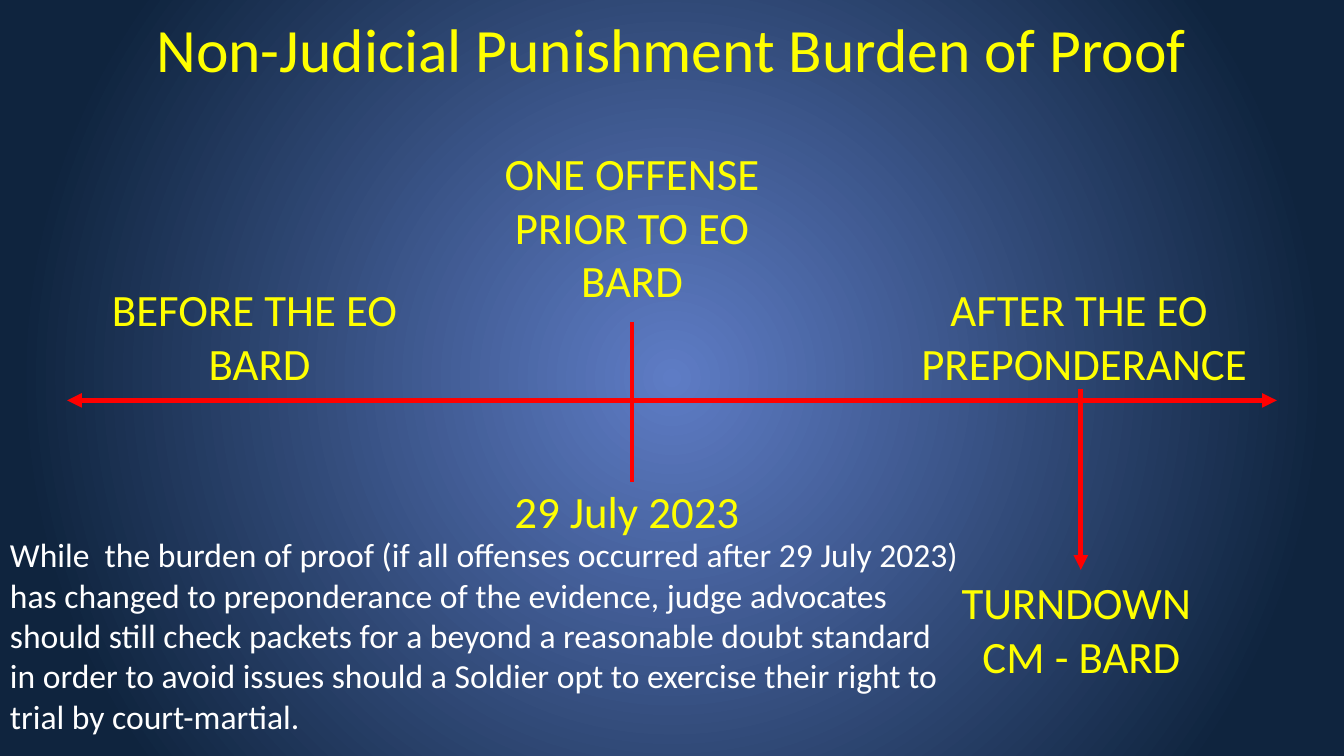
from lxml.etree import SubElement
from pptx import Presentation
from pptx.dml.color import RGBColor
from pptx.enum.shapes import MSO_CONNECTOR as Connector
from pptx.enum.text import MSO_ANCHOR as Anchor, PP_ALIGN as Align
from pptx.oxml.ns import qn
from pptx.util import Pt

COLORS = {"glow": "5E7CC5", "edge": "0F243E", "label": "FFFF00",
          "line": "FF0000", "note": "FFFFFF"}
FONT = "Calibri"
SLIDE_W, SLIDE_H = 960, 540

TITLE = "Non-Judicial Punishment Burden of Proof"
LABEL_W = 275
# left, top, height, lines
LABELS = [
    (314, 342, 46, ["29 July 2023 "]),
    (48, 197.5, 85, ["BEFORE THE EO ", "BARD"]),
    (637, 197.5, 85, ["AFTER THE EO ", "PREPONDERANCE"]),
    (314, 100.5, 124, ["ONE OFFENSE PRIOR TO EO", "BARD"]),
    (635, 407, 85, ["TURNDOWN ", "CM - BARD"]),
]
NOTE = [
    "While  the burden of proof (if all offenses occurred after 29 July 2023)",
    "has changed to preponderance of the evidence, judge advocates",
    "should still check packets for a beyond a reasonable doubt standard",
    "in order to avoid issues should a Soldier opt to exercise their right to",
    "trial by court-martial.",
]
# start, end, ends that carry an arrowhead
TIMELINE = ((48, 286), (912, 286), ["headEnd", "tailEnd"])
DATE_MARK = ((451.5, 230), (451.5, 344), [])
TURNDOWN_ARROW = ((772, 278), (772, 407), ["tailEnd"])


def paint_background(slide):
    """Fill the slide with a gradient that spreads in circles from its centre."""
    fill = slide.background.fill
    fill.gradient()
    for stop, color, position in zip(fill.gradient_stops, ("glow", "edge"), (0, 0.85)):
        stop.color.rgb = RGBColor.from_string(COLORS[color])
        stop.position = position
    gradient = next(slide.element.iter(qn("a:gradFill")))
    gradient.remove(gradient.find(qn("a:lin")))
    circle = SubElement(gradient, qn("a:path"), {"path": "circle"})
    SubElement(circle, qn("a:fillToRect"), dict.fromkeys("ltrb", "50000"))


def add_text(slide, lines, left, top, width, height, *, size=32, color="label",
             align=Align.CENTER, anchor=Anchor.TOP, wrap=True):
    box = slide.shapes.add_textbox(Pt(left), Pt(top), Pt(width), Pt(height))
    frame = box.text_frame
    frame.word_wrap = wrap
    frame.vertical_anchor = anchor
    frame.text = "\n".join(lines)
    for paragraph in frame.paragraphs:
        paragraph.alignment = align
        font = paragraph.runs[0].font
        font.name, font.size = FONT, Pt(size)
        font.color.rgb = RGBColor.from_string(COLORS[color])


def add_line(slide, start, end, arrow_ends):
    connector = slide.shapes.add_connector(
        Connector.STRAIGHT, *(Pt(value) for value in start + end))
    connector.line.width = Pt(3.5)
    connector.line.color.rgb = RGBColor.from_string(COLORS["line"])
    properties = connector.element.spPr
    for arrow_end in arrow_ends:
        SubElement(properties.find(qn("a:ln")), qn(f"a:{arrow_end}"), {"type": "triangle"})
    SubElement(properties, qn("a:effectLst"))


def main():
    deck = Presentation()
    deck.slide_width, deck.slide_height = Pt(SLIDE_W), Pt(SLIDE_H)
    slide = deck.slides.add_slide(deck.slide_layouts[6])
    paint_background(slide)
    add_text(slide, [TITLE], 48, 3, 864, 63, size=44, anchor=Anchor.MIDDLE)
    for start, end, arrow_ends in (TIMELINE, DATE_MARK, TURNDOWN_ARROW):
        add_line(slide, start, end, arrow_ends)
    for left, top, height, lines in LABELS:
        add_text(slide, lines, left, top, LABEL_W, height)
    add_text(slide, NOTE, 0, 378, 699, 153, size=24, color="note",
             align=Align.LEFT, wrap=False)
    deck.save("out.pptx")


if __name__ == "__main__":
    main()
